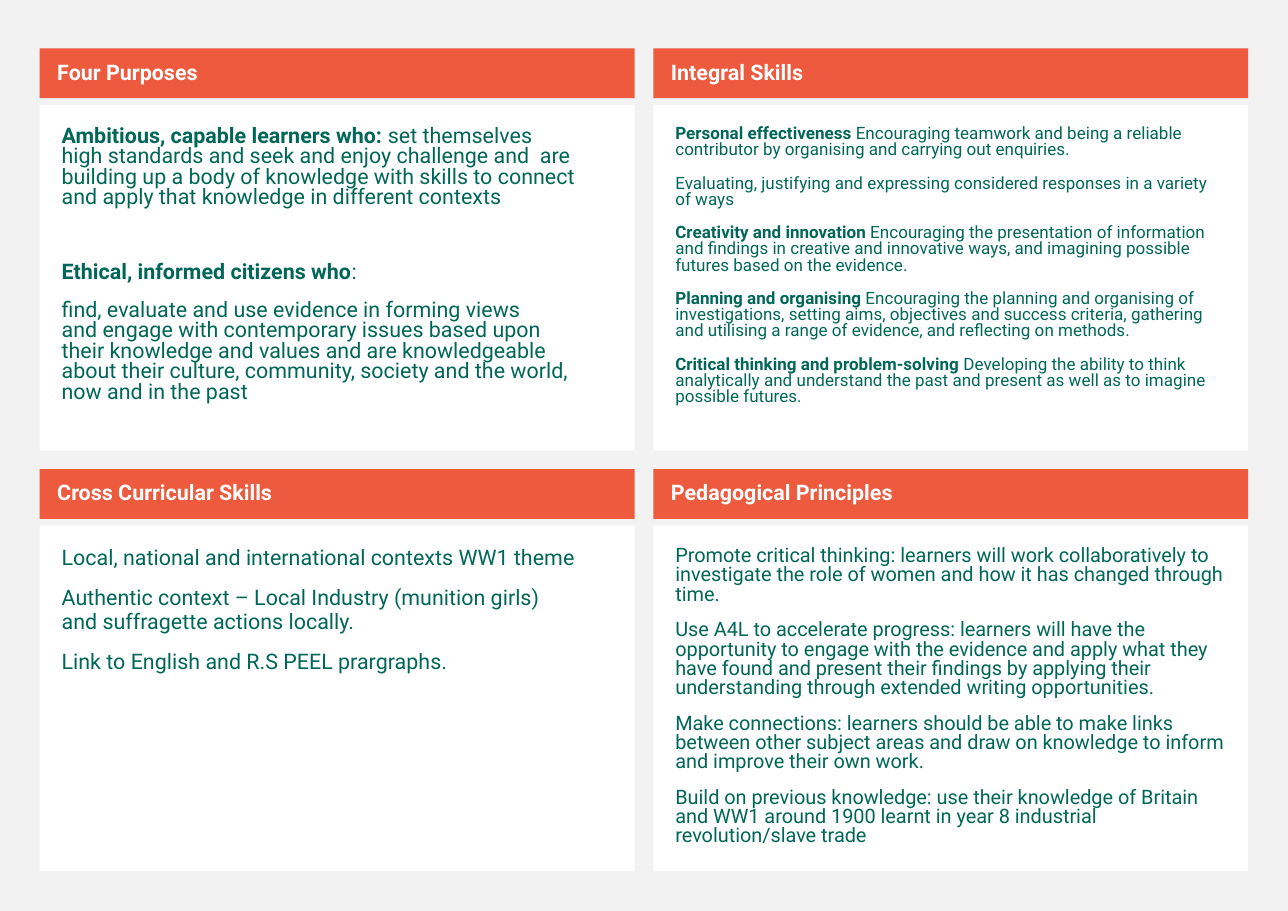
from pptx import Presentation
from pptx.dml.color import RGBColor
from pptx.enum.shapes import MSO_SHAPE
from pptx.enum.text import MSO_ANCHOR, PP_ALIGN
from pptx.util import Inches, Pt

RECTANGLE = MSO_SHAPE.RECTANGLE
LEFT = PP_ALIGN.LEFT
TOP, MIDDLE = MSO_ANCHOR.TOP, MSO_ANCHOR.MIDDLE

FONT = "Roboto"
COLOURS = {
    "background": "F2F2F2",
    "header": "ED5A3E",
    "header_text": "FFFFFF",
    "body": "FFFFFF",
    "body_text": "006758",
}

# Card grid, in inches
GRID_LEFT, GRID_TOP = 0.36, 0.44
COLUMN_STEP, ROW_STEP = 5.57, 3.82
CARD_WIDTH = 5.4
HEADER_HEIGHT = 0.45
BODY_OFFSET, BODY_HEIGHT = 0.51, 3.14

SPACE_BEFORE = 11
WIDE_SPACE = 35.5

# Each paragraph is (bold lead, plain text, space before); "~" ties two words together
CARDS = [
    {
        "title": "Four Purposes", "size": 14, "line_spacing": 0.8,
        "paragraphs": [
            ("Ambitious, capable learners who:~",
             "set themselves high~standards and seek and enjoy challenge and~~are "
             "building~up a body of knowledge with skills to connect and apply~that "
             "knowledge in different contexts", SPACE_BEFORE),
            ("Ethical, informed citizens who", ":", WIDE_SPACE),
            ("", "find, evaluate and use evidence in forming views and~engage with "
             "contemporary issues based upon their~knowledge and values and are "
             "knowledgeable about~their culture, community, society and the world, "
             "now~and in the past", SPACE_BEFORE),
        ],
    },
    {
        "title": "Integral Skills", "size": 11.1, "line_spacing": 0.8,
        "paragraphs": [
            ("Personal effectiveness",
             " Encouraging teamwork and being a reliable contributor by~organising~and "
             "carrying out~enquiries.", SPACE_BEFORE),
            ("", "Evaluating, justifying and expressing considered responses in a "
             "variety of~ways", SPACE_BEFORE),
            ("Creativity and innovation",
             " Encouraging the presentation of information and findings in creative and "
             "innovative ways, and~imagining possible futures based on the evidence.",
             SPACE_BEFORE),
            ("Planning and~organising",
             " Encouraging the planning and~organising~of investigations, setting aims, "
             "objectives and success~criteria, gathering and~utilising~a range of "
             "evidence, and reflecting on~methods.", SPACE_BEFORE),
            ("Critical thinking and problem-solving",
             " Developing the ability to think analytically and understand the past and "
             "present as well as to~imagine possible futures.", SPACE_BEFORE),
        ],
    },
    {
        "title": "Cross Curricular Skills", "size": 14, "line_spacing": 0.9,
        "paragraphs": [
            ("", "Local, national and international contexts WW1~theme", SPACE_BEFORE),
            ("", "Authentic context – Local Industry~(munition girls) and~suffragette "
             "actions~locally.", SPACE_BEFORE),
            ("", "Link to English~and R.S PEEL prargraphs.", SPACE_BEFORE),
        ],
    },
    {
        "title": "Pedagogical Principles", "size": 13, "line_spacing": 0.8,
        "paragraphs": [
            ("", "Promote critical thinking: learners will work collaboratively to "
             "investigate~the role~of women~and~how it has~changed through time.",
             SPACE_BEFORE),
            ("", "Use A4L to accelerate progress: learners will have the opportunity to "
             "engage~with the evidence~and apply what they have found and present their "
             "findings by applying their understanding through~extended "
             "writing~opportunities.", SPACE_BEFORE),
            ("", "Make connections: learners should be able to make links between "
             "other~subject areas and~draw on knowledge to inform and improve their "
             "own~work.", SPACE_BEFORE),
            ("", "Build on previous knowledge: use their knowledge of Britain and WW1 "
             "around 1900~learnt in year 8~industrial revolution/slave~trade",
             SPACE_BEFORE),
        ],
    },
]


def colour(name):
    return RGBColor.from_string(COLOURS[name])


def add_panel(slide, left, top, width, height, fill):
    shape = slide.shapes.add_shape(
        RECTANGLE, Inches(left), Inches(top), Inches(width), Inches(height))
    shape.shadow.inherit = False
    shape.fill.solid()
    shape.fill.fore_color.rgb = colour(fill)
    shape.line.fill.background()
    return shape


def write_text(shape, paragraphs, *, size, text_colour, line_spacing, anchor, margins):
    frame = shape.text_frame
    frame.word_wrap = True
    frame.vertical_anchor = anchor
    (frame.margin_left, frame.margin_top,
     frame.margin_right, frame.margin_bottom) = map(Inches, margins)
    for index, (lead, plain, space_before) in enumerate(paragraphs):
        paragraph = frame.add_paragraph() if index else frame.paragraphs[0]
        paragraph.alignment = LEFT
        paragraph.line_spacing = line_spacing
        paragraph.space_before = Pt(space_before)
        for text, bold in ((lead, True), (plain, False)):
            if text:
                run = paragraph.add_run()
                run.text = text.replace("~", chr(160))
                run.font.name = FONT
                run.font.size = Pt(size)
                run.font.bold = bold
                run.font.color.rgb = colour(text_colour)


def add_card(slide, left, top, width, card):
    # Title bar
    header = add_panel(slide, left, top, width, HEADER_HEIGHT, "header")
    write_text(header, [(card["title"], "", SPACE_BEFORE)], size=14,
               text_colour="header_text", line_spacing=0.9, anchor=MIDDLE,
               margins=(0.16, 0.05, 0.1, 0.05))
    # Body text
    body = add_panel(slide, left, top + BODY_OFFSET, width, BODY_HEIGHT, "body")
    write_text(body, card["paragraphs"], size=card["size"],
               text_colour="body_text", line_spacing=card["line_spacing"],
               anchor=TOP, margins=(0.2, 0.2, 0.2, 0.2))


def main():
    presentation = Presentation()
    presentation.slide_width = Inches(11.69)
    presentation.slide_height = Inches(8.27)
    slide = presentation.slides.add_slide(presentation.slide_layouts[6])
    slide.background.fill.solid()
    slide.background.fill.fore_color.rgb = colour("background")

    # Two by two grid of cards
    for index, card in enumerate(CARDS):
        row, column = divmod(index, 2)
        add_card(slide, GRID_LEFT + column * COLUMN_STEP,
                 GRID_TOP + row * ROW_STEP, CARD_WIDTH, card)

    presentation.save("out.pptx")


if __name__ == "__main__":
    main()
